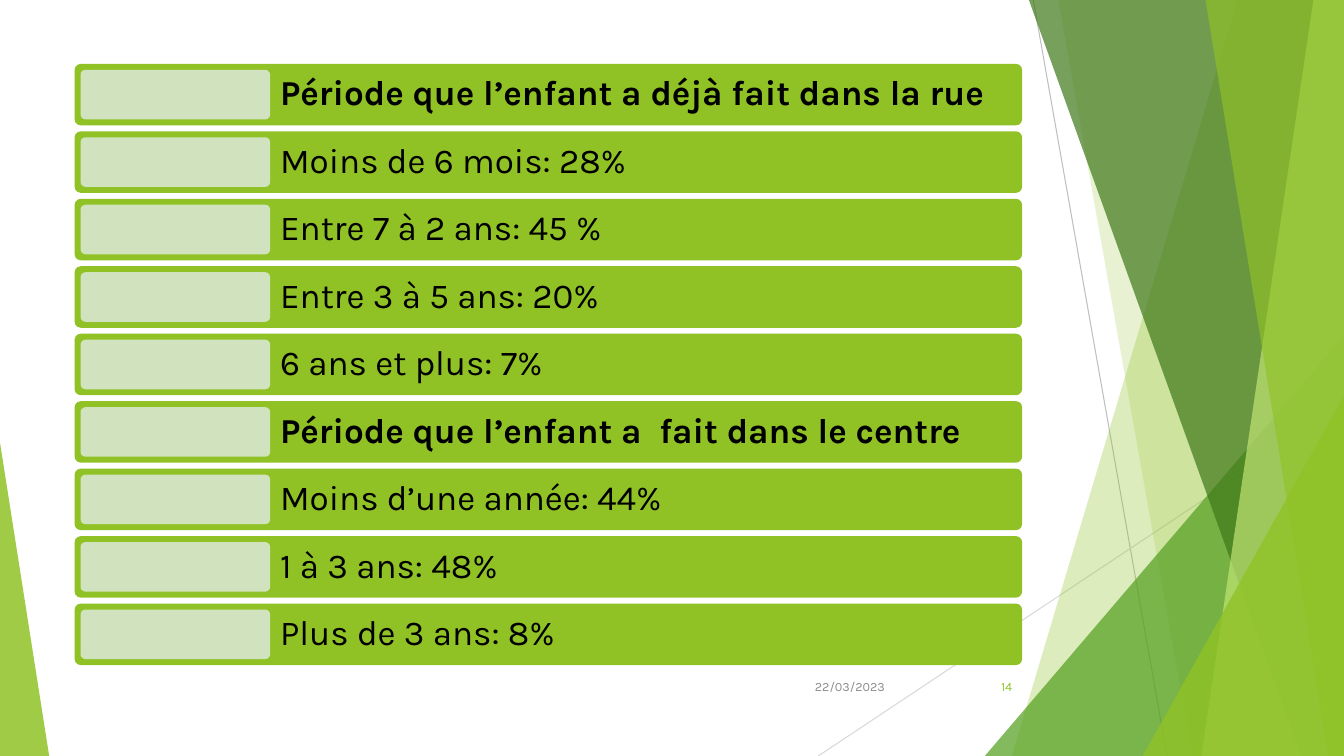
from lxml import etree
from pptx import Presentation
from pptx.dml.color import RGBColor
from pptx.enum.shapes import MSO_CONNECTOR, MSO_SHAPE
from pptx.enum.text import MSO_ANCHOR, PP_ALIGN
from pptx.oxml.ns import qn
from pptx.util import Cm, Pt

STRAIGHT = MSO_CONNECTOR.STRAIGHT
TRIANGLE = MSO_SHAPE.ISOSCELES_TRIANGLE
ROUNDED = MSO_SHAPE.ROUNDED_RECTANGLE
MIDDLE = MSO_ANCHOR.MIDDLE
LEFT, RIGHT = PP_ALIGN.LEFT, PP_ALIGN.RIGHT

LIME = RGBColor(0x90, 0xC2, 0x26)
LEAF = RGBColor(0x54, 0xA0, 0x21)
FOREST = RGBColor(0x3F, 0x78, 0x19)
PALE_LIME = RGBColor(0xC0, 0xE4, 0x74)
TILE_GREEN = RGBColor(0xD1, 0xE3, 0xBE)
BLACK = RGBColor(0, 0, 0)
DATE_GREY = RGBColor(0x8C, 0x8C, 0x8C)
LINE_GREY = RGBColor(0xBF, 0xBF, 0xBF)
LIGHT_GREY = RGBColor(0xD9, 0xD9, 0xD9)

FONT = "Karla"
WIDTH, HEIGHT = 33.87, 19.05

ROWS = [
    ("Période que l’enfant a déjà fait dans la rue", True),
    ("Moins de 6 mois: 28%", False),
    ("Entre 7 à 2 ans: 45 %", False),
    ("Entre 3 à 5 ans: 20%", False),
    ("6 ans et plus: 7%", False),
    ("Période que l’enfant a  fait dans le centre", True),
    ("Moins d’une année: 44%", False),
    ("1 à 3 ans: 48%", False),
    ("Plus de 3 ans: 8%", False),
]


def paint(shape, color, opacity=100):
    shape.shadow.inherit = False
    shape.fill.solid()
    shape.fill.fore_color.rgb = color
    shape.line.fill.background()
    if opacity < 100:
        tint = shape.element.spPr.find(qn("a:solidFill")).find(qn("a:srgbClr"))
        etree.SubElement(tint, qn("a:alpha"), val=str(opacity * 1000))


def add_line(slide, start, end, color):
    line = slide.shapes.add_connector(STRAIGHT, *map(Cm, start + end))
    line.line.color.rgb = color
    line.line.width = Pt(0.75)
    etree.SubElement(line.element.spPr, qn("a:effectLst"))


def add_band(slide, box, top_left, bottom_left, color, opacity):
    left, top, width, height = box
    right, bottom = left + width, top + height
    outline = slide.shapes.build_freeform(Cm(left + top_left), Cm(top), scale=1.0)
    corners = [(right, top), (right, bottom), (left + bottom_left, bottom)]
    outline.add_line_segments([(Cm(x), Cm(y)) for x, y in corners], close=True)
    paint(outline.convert_to_shape(), color, opacity)


def add_triangle(slide, box, apex, color, opacity):
    triangle = slide.shapes.add_shape(TRIANGLE, *map(Cm, box))
    triangle.adjustments[0] = apex
    paint(triangle, color, opacity)


def add_corner(slide, box, left, top, color, opacity):
    box_left, box_top, width, height = box
    corner = (box_left + left, box_top + top, width - left, height - top)
    add_triangle(slide, corner, 1, color, opacity)


def add_facets(slide, box):
    add_line(slide, (26.04, 0), (29.41, HEIGHT), LINE_GREY)
    add_line(slide, (WIDTH, 10.24), (20.62, HEIGHT), LIGHT_GREY)
    add_band(slide, box, 6.37, 0.68, LIME, 30)
    add_band(slide, box, 1.85, 5.23, LIME, 20)
    add_corner(slide, box, 0, 8.46, LEAF, 72)
    add_band(slide, box, 1.11, 7.97, FOREST, 70)
    add_band(slide, box, 8.28, 5.46, PALE_LIME, 70)
    add_band(slide, box, 5.56, 8.66, LIME, 65)
    add_corner(slide, box, 3.98, 9.98, LIME, 80)
    add_triangle(slide, (0, 11.15, 1.24, 7.9), 0, LIME, 85)


def add_text(slide, box, text, size, color, align=LEFT, bold=False):
    frame = slide.shapes.add_textbox(*map(Cm, box)).text_frame
    frame.word_wrap = True
    frame.vertical_anchor = MIDDLE
    para = frame.paragraphs[0]
    para.text = text
    para.alignment = align
    span = para.runs[0]
    span.font.name = FONT
    span.font.size = Pt(size)
    span.font.bold = bold
    span.font.color.rgb = color
    return frame


def add_rounded(slide, box, color):
    shape = slide.shapes.add_shape(ROUNDED, *map(Cm, box))
    shape.adjustments[0] = 0.1
    paint(shape, color)


def add_row(slide, box, text, bold):
    left, top, width, height = box
    inset, tile_width = 0.15, 4.78
    text_left = inset + tile_width
    add_rounded(slide, box, LIME)
    text_box = (left + text_left, top, width - text_left, height)
    frame = add_text(slide, text_box, text, 25, BLACK, bold=bold)
    frame.margin_left = frame.margin_right = Cm(0.25)
    frame.margin_top = frame.margin_bottom = Cm(0.25)
    frame.paragraphs[0].line_spacing = 0.9
    tile = (left + inset, top + inset, tile_width, height - 2 * inset)
    add_rounded(slide, tile, TILE_GREEN)


def add_rows(slide, box):
    left, top, width, height = box
    gap = 0.15
    row_height = (height + gap) / len(ROWS) - gap
    for index, (text, bold) in enumerate(ROWS):
        row_top = top + index * (row_height + gap)
        add_row(slide, (left, row_top, width, row_height), text, bold)


def add_footer(slide, box):
    left, top, width, height = box
    number_width, date_width = 1.9, 2.54
    number_box = (left + width - number_width, top, number_width, height)
    add_text(slide, number_box, "14", 9, LIME, RIGHT)
    add_text(slide, (left, top, date_width, height), "22/03/2023", 9, DATE_GREY, RIGHT)


def main():
    deck = Presentation()
    deck.slide_width, deck.slide_height = Cm(WIDTH), Cm(HEIGHT)
    slide = deck.slides.add_slide(deck.slide_layouts[6])
    add_facets(slide, (24.82, 0, WIDTH - 24.82, HEIGHT))
    add_rows(slide, (1.88, 1.61, 23.88, 15.15))
    add_footer(slide, (20.01, 16.79, 5.75, 1.02))
    deck.save("out.pptx")


if __name__ == "__main__":
    main()
